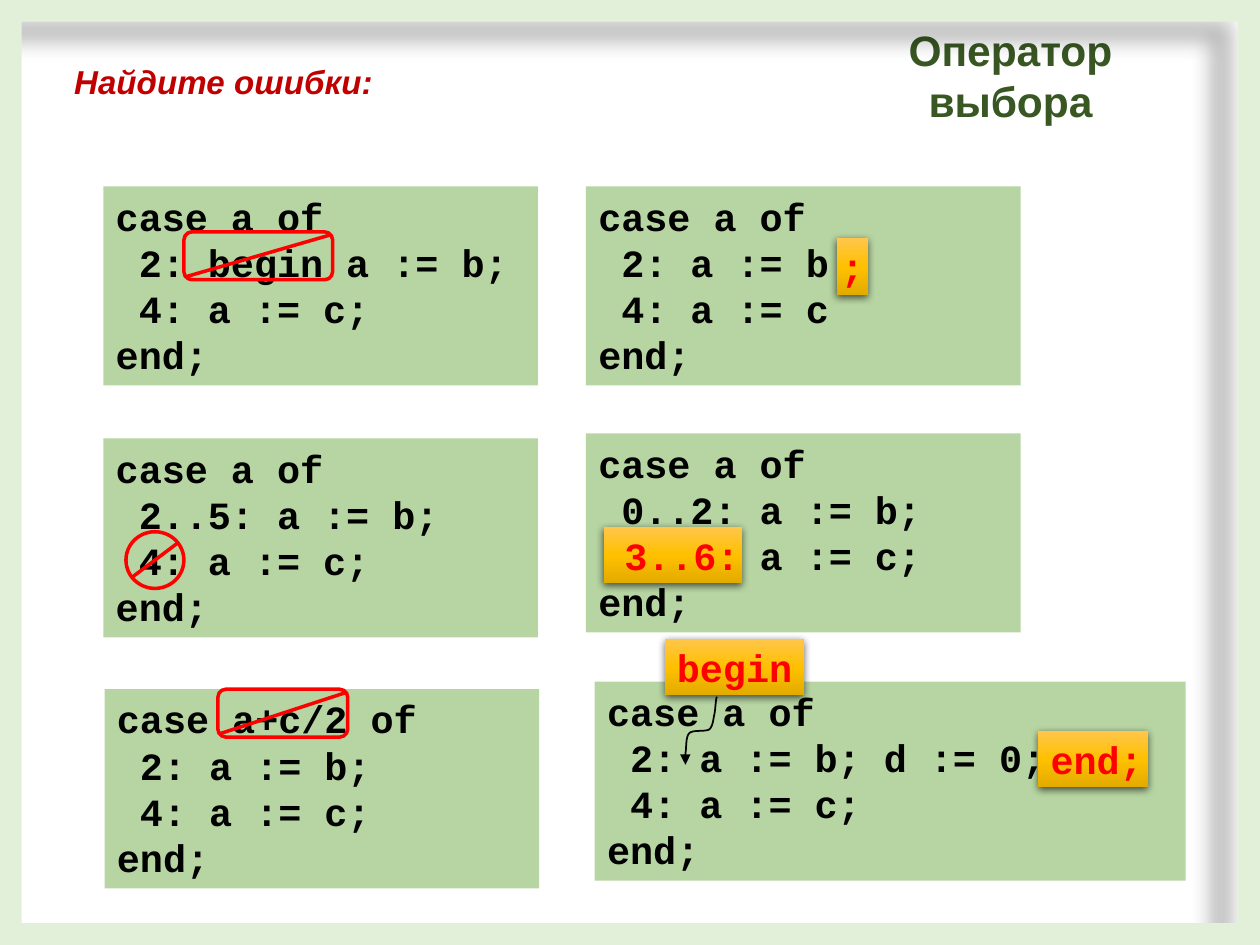
"""Builds a slide of six Pascal case statements with their mistakes marked."""
import copy
from dataclasses import dataclass

import pptx
import pptx.dml.color
import pptx.enum.shapes
import pptx.enum.text
import pptx.oxml.ns
import pptx.util
from lxml import etree

KIND = pptx.enum.shapes.MSO_SHAPE
ALIGN = pptx.enum.text.PP_ALIGN
ANCHOR = pptx.enum.text.MSO_ANCHOR
qn = pptx.oxml.ns.qn


@dataclass(frozen=True)
class Theme:
    code: str = "Courier New"
    text: str = "Arial"
    ink: str = "000000"
    mark: str = "FF0000"
    task: str = "C00000"
    head: str = "385723"
    panel: str = "70AD47"
    edge: str = "E2F0D9"
    gold: tuple = ("FFC64B", "FFC000", "E3AB00")
    size: float = 22
    task_size: float = 18.9
    head_size: float = 24.3


def rgb(tint):
    return pptx.dml.color.RGBColor.from_string(tint)


def unit(count):
    return round(pptx.util.Inches(1) * count / 10)


def add(node, tag, **attrs):
    item = etree.SubElement(node, qn(tag))
    for key, value in attrs.items():
        item.set(key, str(value))
    return item


class Board:
    def __init__(self, slide, theme):
        self.slide, self.theme = slide, theme

    def shape(self, kind, box, home=None):
        item = (home or self.slide).shapes.add_shape(kind, *map(unit, box))
        item.shadow.inherit = False
        item.fill.background()
        item.line.fill.background()
        return item

    def paint(self, item, tint):
        item.fill.solid()
        item.fill.fore_color.rgb = rgb(tint)

    def shade(self, item, alpha, blur, dist, angle):
        glow = add(item._element.spPr.find(qn("a:effectLst")), "a:outerShdw",
                   blurRad=pptx.util.Pt(blur), dist=pptx.util.Pt(dist),
                   dir=angle * 60000, algn="ctr", rotWithShape=0)
        tint = add(glow, "a:srgbClr", val=self.theme.ink)
        add(tint, "a:alpha", val=alpha * 1000)

    def letter(self, item, text, font, size, tint, align=ALIGN.LEFT,
               anchor=ANCHOR.TOP, pad=(1, 0.5, 1, 0.5), wrap=True, slant=False):
        frame = item.text_frame
        frame.text = text
        frame.word_wrap, frame.vertical_anchor = wrap, anchor
        (frame.margin_left, frame.margin_top,
         frame.margin_right, frame.margin_bottom) = map(unit, pad)
        for para in frame.paragraphs:
            para.alignment = align
            para.font.name, para.font.size = font, pptx.util.Pt(size)
            para.font.bold, para.font.italic = True, slant
            para.font.color.rgb = rgb(tint)

    def label(self, box, *args, **style):
        item = self.slide.shapes.add_textbox(*map(unit, box))
        self.letter(item, *args, **style)

    def panel(self, left, top, text, width=34.5):
        item = self.shape(KIND.RECTANGLE, (left, top, width, 15.8))
        self.paint(item, self.theme.panel)
        add(item._element.spPr.find(".//" + qn("a:srgbClr")), "a:alpha", val=50000)
        self.letter(item, text, self.theme.code, self.theme.size, self.theme.ink)

    def strike(self, kind, box, gap):
        group = self.slide.shapes.add_group_shape()
        left, top, width, height = box
        ring = self.shape(kind, box, group)
        slash = group.shapes.add_connector(
            pptx.enum.shapes.MSO_CONNECTOR.STRAIGHT,
            unit(left + gap[0]), unit(top + height - gap[1]),
            unit(left + width - gap[0]), unit(top + gap[1]))
        add(slash._element.spPr, "a:effectLst")
        for item in (ring, slash):
            item.line.color.rgb = rgb(self.theme.mark)
            item.line.width = pptx.util.Pt(2)

    def tag(self, left, top, width, text, align=ALIGN.CENTER, pad=(0.2, 0.5, 0.2, 0.5)):
        item = self.shape(KIND.RECTANGLE, (left, top, width, 4.5))
        item.fill.gradient()
        item.fill.gradient_angle = 270
        stops = item._element.spPr.find(".//" + qn("a:gsLst"))
        stops.append(copy.deepcopy(stops[0]))
        for rank, stop in enumerate(item.fill.gradient_stops):
            stop.position = rank / 2
            stop.color.rgb = rgb(self.theme.gold[rank])
        self.shade(item, 63, 4.5, 1.5, 90)
        self.letter(item, text, self.theme.code, self.theme.size, self.theme.mark,
                    align, ANCHOR.MIDDLE, pad, wrap=False)

    def arrow(self, start, curves, steps=8):
        pen = self.slide.shapes.build_freeform(*map(unit, start), scale=1)
        spots, last = [], start
        for curve in curves:
            ends = (last, *curve)
            for step in range(1, steps + 1):
                t = step / steps
                parts = ((1 - t) ** 3, 3 * t * (1 - t) ** 2, 3 * t * t * (1 - t), t ** 3)
                spots.append([unit(sum(w * p[axis] for w, p in zip(parts, ends)))
                              for axis in (0, 1)])
            last = curve[-1]
        pen.add_line_segments(spots, close=False)
        item = pen.convert_to_shape()
        item.shadow.inherit = False
        item.fill.background()
        item.line.color.rgb = rgb(self.theme.ink)
        item.line.width = pptx.util.Pt(1)
        add(item._element.spPr.find(qn("a:ln")), "a:tailEnd", type="triangle")

    def frame(self, box):
        item = self.shape(KIND.FRAME, box)
        item.adjustments[0] = 0.023
        self.paint(item, self.theme.edge)
        self.shade(item, 28, 11.8, 19.7, 141)


def main():
    deck = pptx.Presentation()
    deck.slide_width, deck.slide_height = unit(100), unit(75)
    theme = Theme()
    board = Board(deck.slides.add_slide(deck.slide_layouts[6]), theme)

    board.label((4.9, 4.4, 89, 4.2), "Найдите ошибки:", theme.text,
                theme.task_size, theme.task, slant=True)

    west, east = 8.2, 46.5
    board.panel(west, 14.8, "case a of\n 2: begin a := b;\n 4: a := c;\nend;")
    board.strike(KIND.ROUNDED_RECTANGLE, (14.6, 18.4, 11.8, 3.8), (0.2, 0.25))
    board.panel(east, 14.8, "case a of\n 2: a := b\n 4: a := c\nend;")
    board.tag(66.4, 18.9, 2.5, ";", pad=(1, 0.5, 1, 0.5))

    board.panel(west, 34.8, "case a of\n 2..5: a := b;\n 4: a := c;\nend;")
    board.strike(KIND.OVAL, (10, 42.2, 4.6, 4.5), (0.5, 0.9))
    board.panel(east, 34.4, "case a of\n 0..2: a := b;\n 6..3: a := c;\nend;")
    board.tag(47.9, 41.8, 11, "3..6:", ALIGN.RIGHT)

    board.panel(8.3, 54.7, "case a+c/2 of\n 2: a := b;\n 4: a := c;\nend;")
    board.strike(KIND.ROUNDED_RECTANGLE, (17.3, 54.7, 10.3, 3.8), (0.1, 0.25))
    board.panel(47.2, 54.1, "case a of\n 2: a := b; d := 0;\n 4: a := c;\nend;", 46.9)
    board.tag(52.8, 50.7, 11, "begin")
    board.tag(82.4, 58, 8.7, "end;", ALIGN.LEFT, (1, 0.5, 0.2, 0.5))
    board.arrow((56.9, 55.3), [
        ((56.8, 55.5), (56.8, 56.2), (56.7, 56.7)),
        ((56.6, 57.1), (56.6, 57.6), (56.3, 57.9)),
        ((55.9, 58.1), (55, 57.9), (54.7, 58.2)),
        ((54.4, 58.5), (54.5, 59.4), (54.4, 59.8)),
        ((54.4, 60.2), (54.2, 60.5), (54.4, 60.7))])

    board.label((66.9, 1.9, 26.6, 7.2), "Оператор выбора", theme.text,
                theme.head_size, theme.head, ALIGN.CENTER, pad=(0, 0, 0, 0), wrap=False)
    board.frame((0, 0, 100, 75))
    deck.save("out.pptx")


if __name__ == "__main__":
    main()
